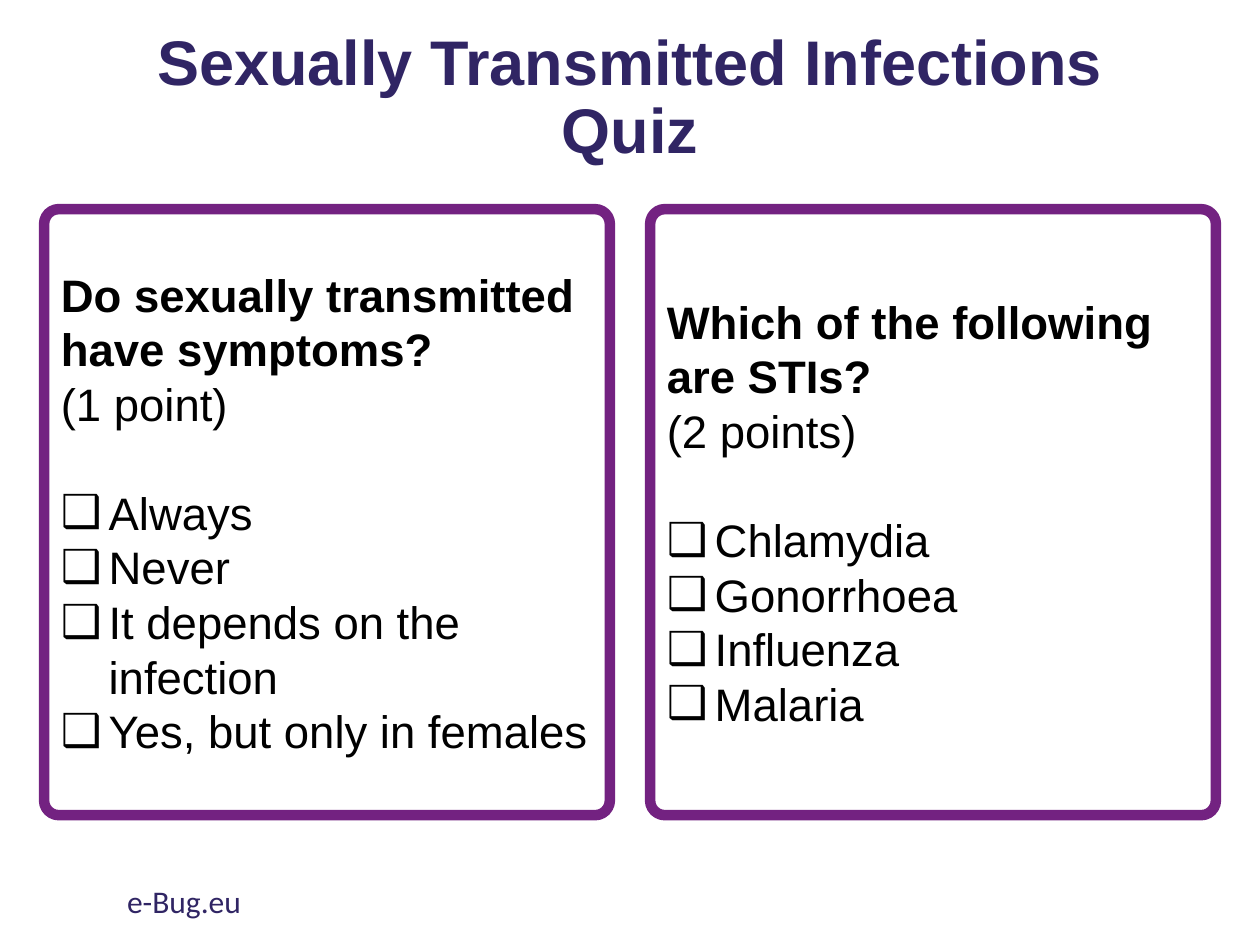
from lxml import etree
from pptx import Presentation
from pptx import util as u
from pptx.dml.color import RGBColor
from pptx.enum import shapes, text
from pptx.oxml import ns

NAVY = RGBColor(0x30, 0x25, 0x64)
PURPLE = RGBColor(0x73, 0x22, 0x81)
BLACK = RGBColor(0, 0, 0)

CARD_LEFT, CARD_TOP = 0.35, 1.66
CARD_WIDTH, CARD_HEIGHT = 4.49, 4.81
CARD_STEP = 4.81

QUESTIONS = [
    ("Do sexually transmitted have symptoms?", "(1 point)",
     ["Always", "Never", "It depends on the infection", "Yes, but only in females"]),
    ("Which of the following are STIs?", "(2 points)",
     ["Chlamydia", "Gonorrhoea", "Influenza", "Malaria"]),
]


class QuizPage:
    heading_font = "Arial"
    footer_font = "Calibri"
    card_size = 26
    option_gap = 31.2

    def __init__(self, deck):
        self.page = deck.slides.add_slide(deck.slide_layouts[5])

    def place(self, shape, left, top, width, height):
        shape.left, shape.top = u.Inches(left), u.Inches(top)
        shape.width, shape.height = u.Inches(width), u.Inches(height)

    def add_span(self, para, words, size, color, font, bold=False):
        span = para.add_run()
        span.text = words
        span.font.name = font
        span.font.size = u.Pt(size)
        span.font.bold = bold
        span.font.color.rgb = color

    def title(self, words):
        box = self.page.shapes.title
        self.place(box, 0.69, 0.33, 8.62, 0.91)
        frame = box.text_frame
        frame.word_wrap = True
        frame.auto_size = text.MSO_AUTO_SIZE.NONE
        frame.vertical_anchor = text.MSO_ANCHOR.MIDDLE
        para = frame.paragraphs[0]
        para.alignment = text.PP_ALIGN.CENTER
        para.line_spacing = 0.9
        self.add_span(para, words, 36, NAVY, self.heading_font, True)

    def checkbox(self, para):
        props = para._p.get_or_add_pPr()
        props.set("marL", str(u.Inches(0.38)))
        props.set("indent", str(u.Inches(-0.38)))
        etree.SubElement(props, ns.qn("a:buFont"), typeface=self.heading_font)
        etree.SubElement(props, ns.qn("a:buChar"), char="❑")
        tabs = etree.SubElement(props, ns.qn("a:tabLst"))
        etree.SubElement(tabs, ns.qn("a:tab"), pos=str(u.Inches(0.5)), algn="l")

    def card(self, left, question, points, options):
        box = self.page.shapes.add_shape(
            shapes.MSO_SHAPE.ROUNDED_RECTANGLE, u.Inches(left), u.Inches(CARD_TOP),
            u.Inches(CARD_WIDTH), u.Inches(CARD_HEIGHT))
        box.adjustments[0] = 0.026
        box.shadow.inherit = False
        box.fill.background()
        box.line.color.rgb = PURPLE
        box.line.width = u.Pt(6)
        frame = box.text_frame
        frame.word_wrap = True
        frame.vertical_anchor = text.MSO_ANCHOR.MIDDLE
        for index, words in enumerate([question, points, *options]):
            para = frame.add_paragraph() if index else frame.paragraphs[0]
            para.alignment = text.PP_ALIGN.LEFT
            if index == 2:
                para.space_before = u.Pt(self.option_gap)
            if index >= 2:
                self.checkbox(para)
            self.add_span(para, words, self.card_size, BLACK, self.heading_font, index == 0)

    def footer(self, words):
        box = self.page.shapes.add_textbox(
            u.Inches(0.91), u.Inches(6.95), u.Inches(3.38), u.Inches(0.4))
        box.text_frame.word_wrap = True
        self.add_span(box.text_frame.paragraphs[0], words, 18, NAVY, self.footer_font)


def main():
    deck = Presentation()
    deck.slide_width, deck.slide_height = u.Inches(10), u.Inches(7.5)
    quiz = QuizPage(deck)
    quiz.title("Sexually Transmitted Infections Quiz")
    for column, (question, points, options) in enumerate(QUESTIONS):
        quiz.card(CARD_LEFT + column * CARD_STEP, question, points, options)
    quiz.footer("e-Bug.eu")
    deck.save("out.pptx")


if __name__ == "__main__":
    main()
